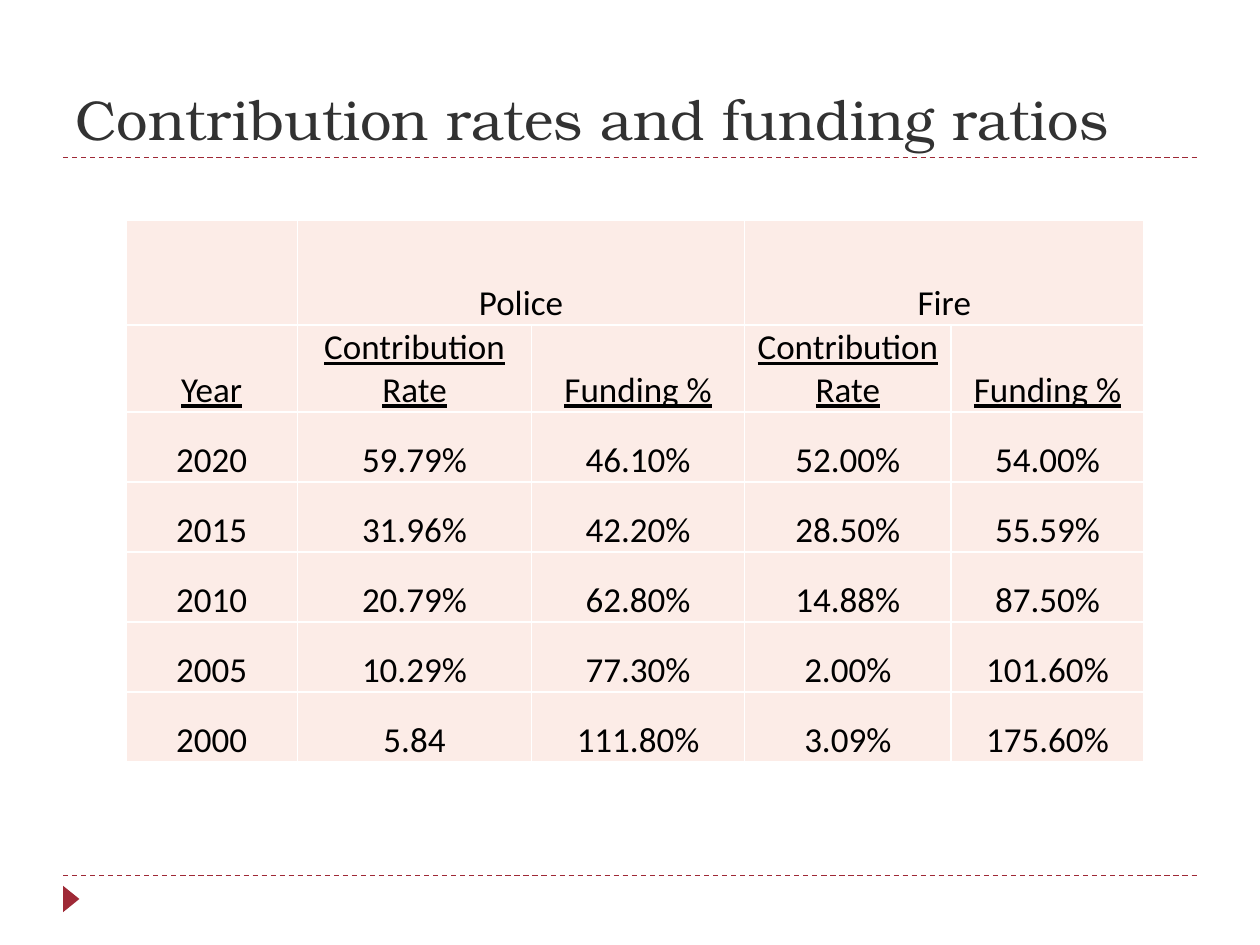
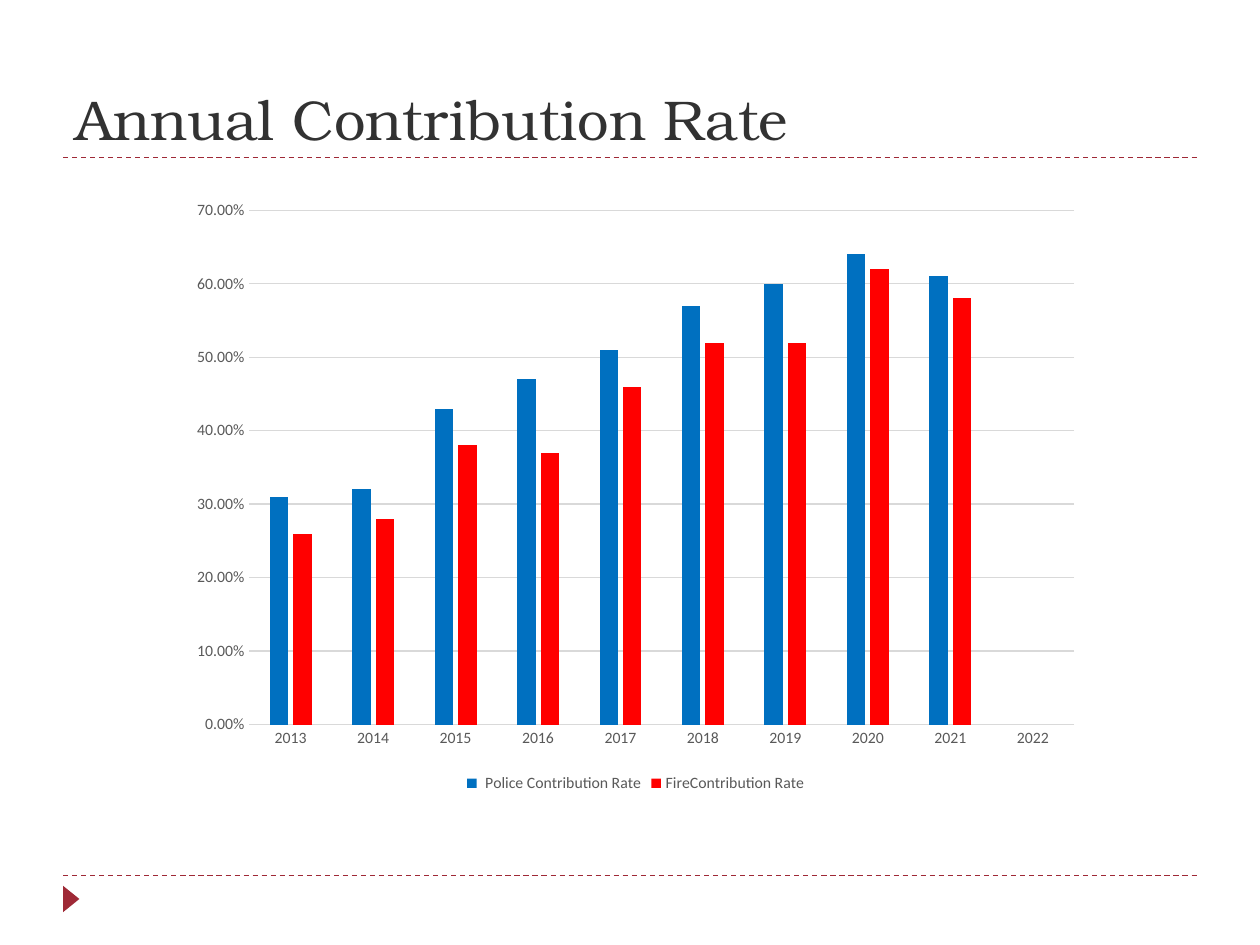
import pptx
import pptx.chart.data
import pptx.dml.color
import pptx.enum.chart
import pptx.enum.dml
import pptx.enum.shapes
import pptx.enum.text
import pptx.oxml.ns
import pptx.util
from lxml import etree
from pptx.util import Inches

COLORS = {
    "accent": "9F2936",
    "title": "323232",
    "text": "000000",
    "cell": "FCECE7",
    "border": "FFFFFF",
    "label": "595959",
    "grid": "D9D9D9",
    "police": "0070C0",
    "fire": "FF0000",
}
TITLE_FONT = "TeX Gyre Bonum"
BODY_FONT = "Calibri"

COLUMN_WIDTHS = [1.36, 1.86, 1.69, 1.64, 1.53]
HEADER_HEIGHTS = [0.83, 0.69]
BODY_HEIGHT = 2.78
RATE_ROWS = [
    ["", "Police", "", "Fire", ""],
    ["Year", "Contribution Rate", "Funding %", "Contribution Rate", "Funding %"],
    ["2020", "59.79%", "46.10%", "52.00%", "54.00%"],
    ["2015", "31.96%", "42.20%", "28.50%", "55.59%"],
    ["2010", "20.79%", "62.80%", "14.88%", "87.50%"],
    ["2005", "10.29%", "77.30%", "2.00%", "101.60%"],
    ["2000", "5.84", "111.80%", "3.09%", "175.60%"],
]

YEARS = [str(year) for year in range(2013, 2023)]
RATE_SERIES = [
    (" Police Contribution Rate", "police",
     [0.31, 0.32, 0.43, 0.47, 0.51, 0.57, 0.6, 0.64, 0.61, None]),
    ("FireContribution Rate", "fire",
     [0.26, 0.28, 0.38, 0.37, 0.46, 0.52, 0.52, 0.62, 0.58, None]),
]


def rgb(name):
    return pptx.dml.color.RGBColor.from_string(COLORS[name])


class Deck:
    def __init__(self):
        self.presentation = pptx.Presentation()
        self.presentation.slide_width = Inches(10)
        self.presentation.slide_height = Inches(7.5)
        self.slide = None

    def add_slide(self, title):
        self.slide = self.presentation.slides.add_slide(self.presentation.slide_layouts[6])
        for top in (6.95, 1.25):
            self.add_rule(top)
        self.add_marker()
        self.add_title(title)

    def style_font(self, font, size, color, name=BODY_FONT):
        font.size = pptx.util.Pt(size)
        font.name = name
        font.color.rgb = rgb(color)

    def add_run(self, paragraph, text, size, color, name=BODY_FONT, underline=None):
        run = paragraph.add_run()
        run.text = text
        self.style_font(run.font, size, color, name)
        run.font.underline = underline

    def add_rule(self, top):
        rule = self.slide.shapes.add_connector(
            pptx.enum.shapes.MSO_CONNECTOR.STRAIGHT,
            Inches(0.5), Inches(top), Inches(9.5), Inches(top))
        rule.line.color.rgb = rgb("accent")
        rule.line.width = pptx.util.Pt(0.75)
        rule.line.dash_style = pptx.enum.dml.MSO_LINE.DASH
        properties = rule._element.spPr
        etree.SubElement(properties, pptx.oxml.ns.qn("a:effectLst"))

    def add_marker(self):
        marker = self.slide.shapes.add_shape(
            pptx.enum.shapes.MSO_SHAPE.ISOSCELES_TRIANGLE,
            Inches(0.46), Inches(7.07), Inches(0.21), Inches(0.13))
        marker.rotation = 90
        marker.shadow.inherit = False
        marker.fill.solid()
        marker.fill.fore_color.rgb = rgb("accent")
        marker.line.fill.background()

    def add_title(self, text):
        box = self.slide.shapes.add_textbox(Inches(0.5), Inches(0.25), Inches(9), Inches(1))
        frame = box.text_frame
        frame.word_wrap = True
        frame.vertical_anchor = pptx.enum.text.MSO_ANCHOR.BOTTOM
        self.add_run(frame.paragraphs[0], text, 32, "title", TITLE_FONT)

    def add_borders(self, cell):
        properties = cell._tc.get_or_add_tcPr()
        for side in ("lnL", "lnR", "lnT", "lnB"):
            line = etree.SubElement(properties, pptx.oxml.ns.qn(f"a:{side}"), w="12700")
            fill = etree.SubElement(line, pptx.oxml.ns.qn("a:solidFill"))
            etree.SubElement(fill, pptx.oxml.ns.qn("a:srgbClr"), val=COLORS["border"])

    def fill_cell(self, cell, text, underline):
        self.add_borders(cell)
        cell.fill.solid()
        cell.fill.fore_color.rgb = rgb("cell")
        cell.vertical_anchor = pptx.enum.text.MSO_ANCHOR.BOTTOM
        cell.margin_left = cell.margin_right = cell.margin_top = Inches(0.01)
        cell.margin_bottom = 0
        if text:
            paragraph = cell.text_frame.paragraphs[0]
            paragraph.alignment = pptx.enum.text.PP_ALIGN.CENTER
            self.add_run(paragraph, text, 20, "text", underline=underline)

    def add_rate_table(self, left, top):
        body_count = len(RATE_ROWS) - len(HEADER_HEIGHTS)
        heights = HEADER_HEIGHTS + [BODY_HEIGHT / body_count] * body_count
        table = self.slide.shapes.add_table(
            len(RATE_ROWS), len(COLUMN_WIDTHS), Inches(left), Inches(top),
            Inches(sum(COLUMN_WIDTHS)), Inches(sum(heights))).table
        for column, width in zip(table.columns, COLUMN_WIDTHS):
            column.width = Inches(width)
        for row, height in zip(table.rows, heights):
            row.height = Inches(height)
        for row_index, texts in enumerate(RATE_ROWS):
            for column_index, text in enumerate(texts):
                cell = table.cell(row_index, column_index)
                self.fill_cell(cell, text, underline=row_index == 1)
        for first in (1, 3):
            table.cell(0, first).merge(table.cell(0, first + 1))

    def style_axis(self, axis):
        axis.major_tick_mark = pptx.enum.chart.XL_TICK_MARK.NONE
        axis.minor_tick_mark = pptx.enum.chart.XL_TICK_MARK.NONE
        self.style_font(axis.tick_labels.font, 9, "label")

    def style_line(self, line):
        line.color.rgb = rgb("grid")
        line.width = pptx.util.Pt(0.75)

    def add_rate_chart(self, left, top, width, height):
        data = pptx.chart.data.CategoryChartData(number_format="0.00%")
        data.categories = YEARS
        for name, _, values in RATE_SERIES:
            data.add_series(name, values)
        chart = self.slide.shapes.add_chart(
            pptx.enum.chart.XL_CHART_TYPE.COLUMN_CLUSTERED,
            Inches(left), Inches(top), Inches(width), Inches(height), data).chart
        chart.has_title = False
        self.style_font(chart.font, 10, "text")

        plot = chart.plots[0]
        plot.gap_width = 219
        plot.overlap = -27
        plot.vary_by_categories = False
        for series, (_, color, _) in zip(plot.series, RATE_SERIES):
            series.format.fill.solid()
            series.format.fill.fore_color.rgb = rgb(color)

        self.style_axis(chart.category_axis)
        self.style_line(chart.category_axis.format.line)
        value_axis = chart.value_axis
        self.style_axis(value_axis)
        value_axis.minimum_scale = 0
        value_axis.maximum_scale = 0.7
        value_axis.major_unit = 0.1
        value_axis.format.line.fill.background()
        value_axis.has_major_gridlines = True
        self.style_line(value_axis.major_gridlines.format.line)
        value_axis.tick_labels.number_format = "0.00%"
        value_axis.tick_labels.number_format_is_linked = False

        chart.has_legend = True
        chart.legend.position = pptx.enum.chart.XL_LEGEND_POSITION.BOTTOM
        chart.legend.include_in_layout = False
        self.style_font(chart.legend.font, 9, "label")


def main():
    deck = Deck()
    deck.add_slide("Contribution rates and funding ratios")
    deck.add_rate_table(1, 1.75)
    deck.add_slide("Annual Contribution Rate")
    deck.add_rate_chart(1.42, 1.5, 7.25, 4.83)
    deck.presentation.save("out.pptx")


if __name__ == "__main__":
    main()
